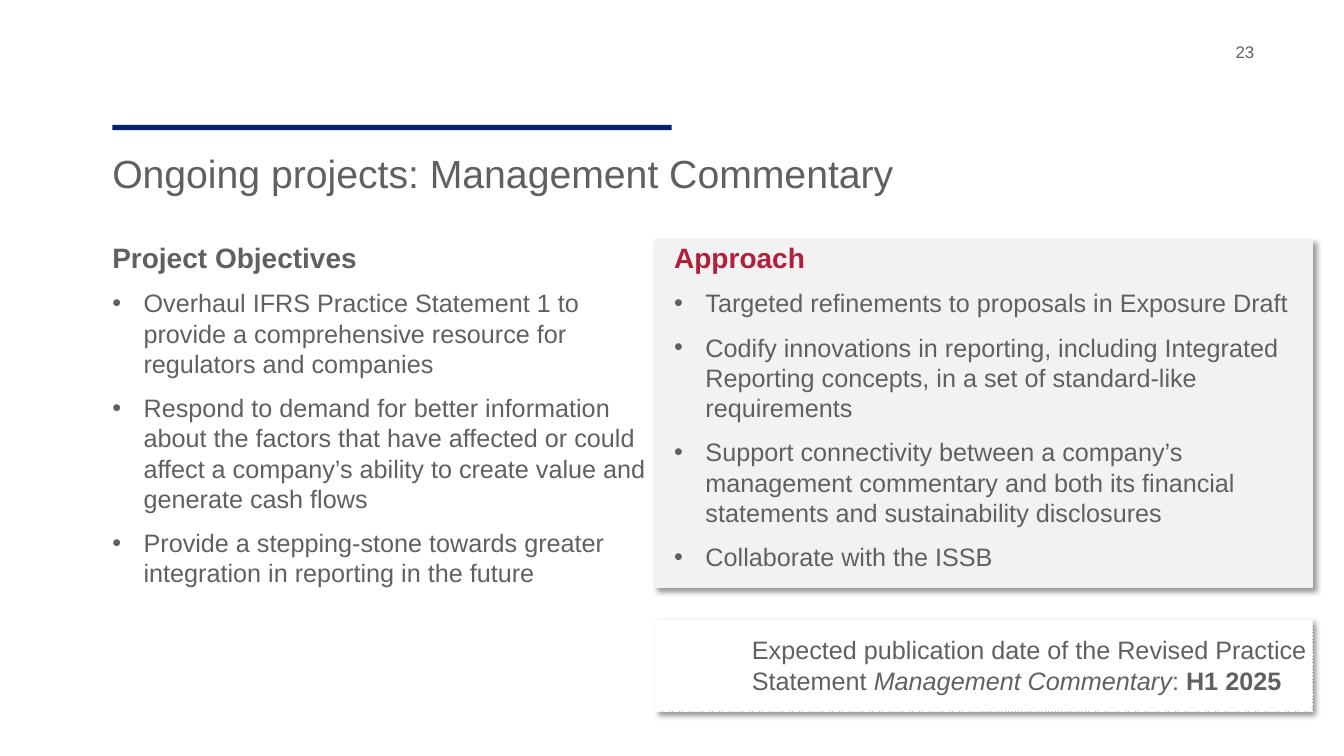
from dataclasses import dataclass

from lxml import etree
from pptx import Presentation
from pptx.dml.color import RGBColor
from pptx.enum import dml, shapes
from pptx.oxml import ns
from pptx.util import Cm, Pt


@dataclass(frozen=True)
class Theme:
    font: str = "Arial"
    ink: str = "5F6061"
    navy: str = "072171"
    crimson: str = "B31E3B"
    panel: str = "F2F2F2"
    white: str = "FFFFFF"
    title: int = 28
    heading: int = 20
    body: int = 18
    number: int = 12
    gap: int = 10


THEME = Theme()
INDENT = Cm(0.79)

OBJECTIVES = [
    "Overhaul IFRS Practice Statement 1 to provide a comprehensive resource for regulators and companies",
    "Respond to demand for better information about the factors that have affected or could affect "
    "a company’s ability to create value and generate cash flows",
    "Provide a stepping-stone towards greater integration in reporting in the future",
]
APPROACH = [
    "Targeted refinements to proposals in Exposure Draft",
    "Codify innovations in reporting, including Integrated Reporting concepts, "
    "in a set of standard-like requirements",
    "Support connectivity between a company’s management commentary and both its financial "
    "statements and sustainability disclosures",
    "Collaborate with the ISSB",
]


def style(paragraph, size, color=THEME.ink, bold=False):
    font = paragraph.font
    font.name, font.size, font.bold = THEME.font, Pt(size), bold
    font.color.rgb = RGBColor.from_string(color)


def add_frame(slide, left, top, width, height, inset=0):
    frame = slide.shapes.add_textbox(left, top, width, height).text_frame
    frame.word_wrap = True
    frame.margin_left = frame.margin_right = Cm(inset)
    frame.margin_top = frame.margin_bottom = Cm(inset / 2)
    return frame


def add_label(slide, label, size, *box):
    paragraph = add_frame(slide, *box).paragraphs[0]
    paragraph.text = label
    style(paragraph, size)


def add_block(slide, fill, *box):
    block = slide.shapes.add_shape(shapes.MSO_SHAPE.RECTANGLE, *box)
    block.shadow.inherit = False
    block.fill.solid()
    block.fill.fore_color.rgb = RGBColor.from_string(fill)
    block.line.fill.background()
    return block


def add_card(slide, fill, line_width, *box):
    """Draw a filled block with a matching outline and a soft shadow."""
    card = add_block(slide, fill, *box)
    card.line.color.rgb = RGBColor.from_string(fill)
    card.line.width = Pt(line_width)
    effects = card._element.spPr.find(ns.qn("a:effectLst"))
    shadow = etree.SubElement(effects, ns.qn("a:outerShdw"), blurRad=str(Pt(4)), dist=str(Pt(3)),
                              dir="2700000", algn="tl", rotWithShape="0")
    black = etree.SubElement(shadow, ns.qn("a:srgbClr"), val="000000")
    etree.SubElement(black, ns.qn("a:alpha"), val="40000")
    return card


def add_bullet(paragraph):
    properties = paragraph._p.get_or_add_pPr()
    properties.set("marL", str(INDENT))
    properties.set("indent", str(-INDENT))
    etree.SubElement(properties, ns.qn("a:buFont"), typeface=THEME.font)
    etree.SubElement(properties, ns.qn("a:buChar"), char="•")


def add_header(slide, left, top, width):
    add_block(slide, THEME.navy, left, top, Cm(14.1), Cm(0.13))
    add_label(slide, "Ongoing projects: Management Commentary", THEME.title,
              left, top + Cm(0.61), width, Cm(1.83))


def add_bullet_column(slide, heading, color, points, *box):
    frame = add_frame(slide, *box)
    frame.paragraphs[0].text = heading
    style(frame.paragraphs[0], THEME.heading, color, bold=True)
    for point in points:
        paragraph = frame.add_paragraph()
        paragraph.text = point
        paragraph.space_before = Pt(THEME.gap)
        add_bullet(paragraph)
        style(paragraph, THEME.body)


def add_approach(slide, left, top, width, height):
    add_card(slide, THEME.panel, 1, left, top, width, height)
    add_bullet_column(slide, "Approach", THEME.crimson, APPROACH,
                      left + Cm(0.48), top, width - Cm(0.96), height)


def add_publication_date(slide, left, top, width, height):
    card = add_card(slide, THEME.white, 0.25, left, top, width, height)
    card.line.dash_style = dml.MSO_LINE.SQUARE_DOT
    frame = add_frame(slide, left + Cm(2.19), top + Cm(0.25), width - Cm(1.68),
                      height - Cm(0.5), inset=0.25)
    paragraph = frame.paragraphs[0]
    style(paragraph, THEME.body)
    for words, italic, bold in [
        ("Expected publication date of the Revised Practice Statement ", False, False),
        ("Management Commentary", True, False),
        (": ", False, False),
        ("H1 2025", False, True),
    ]:
        run = paragraph.add_run()
        run.text = words
        run.font.italic, run.font.bold = italic, bold


def main():
    deck = Presentation()
    deck.slide_width, deck.slide_height = Cm(33.87), Cm(19.05)
    slide = deck.slides.add_slide(deck.slide_layouts[6])

    margin, column_top = Cm(2.83), Cm(6.05)
    card_left, card_width = Cm(16.51), Cm(16.56)
    add_header(slide, margin, Cm(3.15), Cm(28.3))
    add_label(slide, "23", THEME.number, Cm(31.14), Cm(1.04), Cm(1.7), Cm(0.74))
    add_bullet_column(slide, "Project Objectives", THEME.ink, OBJECTIVES,
                      margin, column_top, Cm(13.5), Cm(9.73))
    add_approach(slide, card_left, column_top, card_width, Cm(8.76))
    add_publication_date(slide, card_left, Cm(15.62), card_width, Cm(2.31))
    deck.save("out.pptx")


if __name__ == "__main__":
    main()
